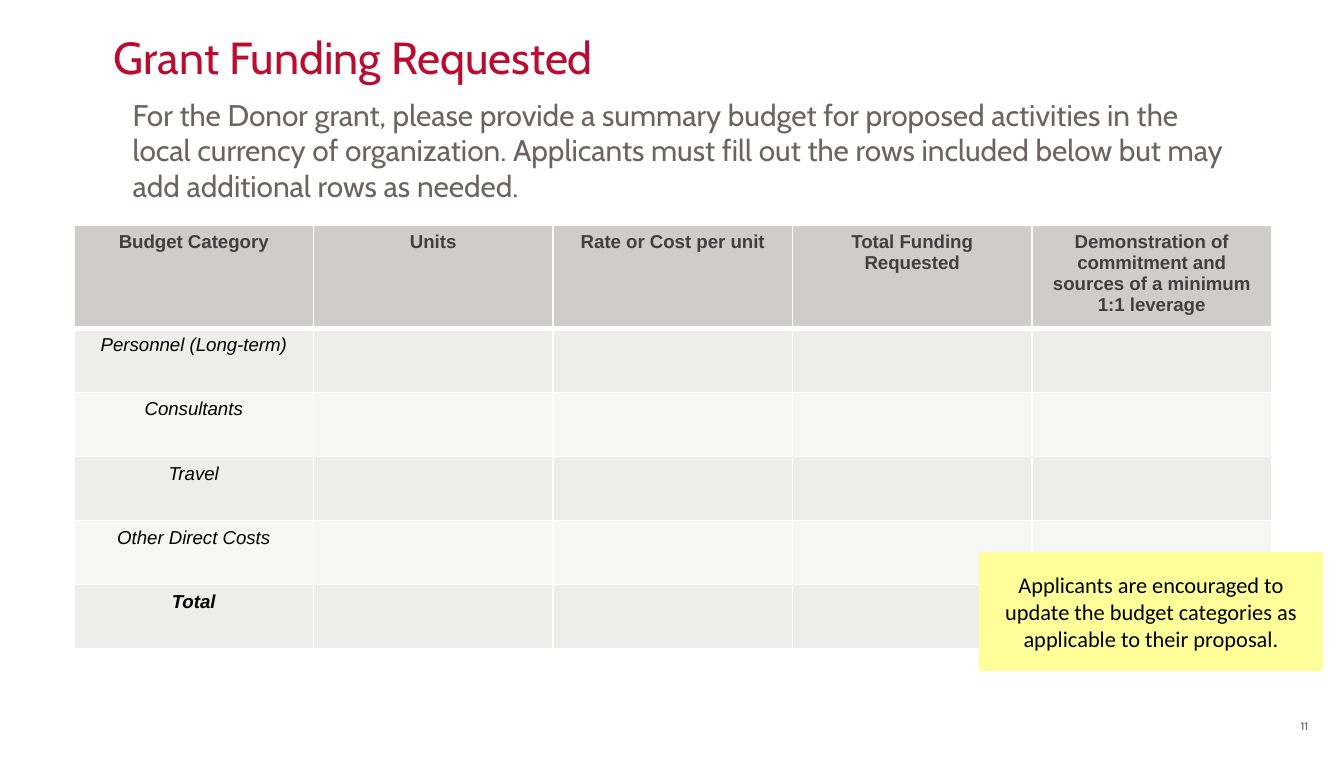
import pptx
import pptx.dml.color
import pptx.enum.shapes
import pptx.enum.text
import pptx.oxml
import pptx.oxml.ns
import pptx.util

Pt = pptx.util.Pt
ALIGN = pptx.enum.text.PP_ALIGN
ANCHOR = pptx.enum.text.MSO_ANCHOR

HEADERS = [
    "Budget Category",
    "Units",
    "Rate or Cost per unit",
    "Total Funding Requested",
    "Demonstration of commitment and sources of a minimum 1:1 leverage",
]
CATEGORIES = [
    "Personnel (Long-term)",
    "Consultants",
    "Travel",
    "Other Direct Costs",
    "Total",
]


def color(value):
    return pptx.dml.color.RGBColor.from_string(value)


def write(frame, text, font, size, ink, align=ALIGN.LEFT, bold=False, italic=False):
    frame.text = text
    para = frame.paragraphs[0]
    para.alignment = align
    for span in para.runs:
        span.font.name = font
        span.font.size = Pt(size)
        span.font.color.rgb = color(ink)
        span.font.bold = bold
        span.font.italic = italic
    return para


def add_text(page, left, top, width, height, anchor, text, size, ink, align=ALIGN.LEFT):
    box = page.shapes.add_textbox(Pt(left), Pt(top), Pt(width), Pt(height))
    frame = box.text_frame
    frame.word_wrap = True
    frame.vertical_anchor = anchor
    return write(frame, text, "Cabin", size, ink, align)


def style_cell(cell, fill, bottom_width=1):
    # Borders come before the fill in the cell properties
    properties = cell._tc.get_or_add_tcPr()
    for side, width in (("L", 1), ("R", 1), ("T", 1), ("B", bottom_width)):
        properties.append(pptx.oxml.parse_xml(
            f'<a:ln{side} {pptx.oxml.ns.nsdecls("a")} w="{Pt(width)}">'
            f'<a:solidFill><a:srgbClr val="FFFFFF"/></a:solidFill></a:ln{side}>'
        ))
    cell.fill.solid()
    cell.fill.fore_color.rgb = color(fill)


def add_budget_table(page):
    row_count, column_count = len(CATEGORIES) + 1, len(HEADERS)
    table = page.shapes.add_table(
        row_count, column_count, Pt(39.6), Pt(120.5), Pt(641.5), Pt(207.5)
    ).table
    for column in table.columns:
        column.width = Pt(128.3)

    # Header row
    table.rows[0].height = Pt(36)
    for index, header in enumerate(HEADERS):
        cell = table.cell(0, index)
        write(cell.text_frame, header, "Arial", 10, "404040", ALIGN.CENTER, bold=True)
        style_cell(cell, "CFCDC9", bottom_width=3)

    # Banded category rows
    for row, category in enumerate(CATEGORIES, start=1):
        table.rows[row].height = Pt(34.3)
        write(table.cell(row, 0).text_frame, category, "Arial", 10, "000000",
              ALIGN.CENTER, bold=category == "Total", italic=True)
        for index in range(column_count):
            style_cell(table.cell(row, index), "EDEDEB" if row % 2 else "F6F6F5")


def add_note(page, left, top, width, height, text):
    note = page.shapes.add_shape(
        pptx.enum.shapes.MSO_SHAPE.RECTANGLE, Pt(left), Pt(top), Pt(width), Pt(height)
    )
    note.shadow.inherit = False
    note.fill.solid()
    note.fill.fore_color.rgb = color("FFFF99")
    note.line.color.rgb = color("FFFF99")
    note.line.width = Pt(2)
    note.text_frame.word_wrap = True
    note.text_frame.vertical_anchor = ANCHOR.MIDDLE
    write(note.text_frame, text, "Calibri", 12, "000000", ALIGN.CENTER)


def main():
    deck = pptx.Presentation()
    deck.slide_width, deck.slide_height = Pt(720), Pt(408)
    page = deck.slides.add_slide(deck.slide_layouts[6])

    # Page number, title and instructions
    add_text(page, 540, 381.6, 168, 14.4, ANCHOR.MIDDLE, "11", 6, "6C6463", ALIGN.RIGHT)
    add_text(page, 54, 12, 612, 36, ANCHOR.BOTTOM, "Grant Funding Requested", 24, "BA0C2F")
    instructions = add_text(
        page, 54, 48, 612, 252, ANCHOR.TOP,
        "For the Donor grant, please provide a summary budget for proposed activities "
        "in the local currency of organization. Applicants must fill out the rows "
        "included below but may add additional rows as needed.",
        16, "6C6463",
    )
    instructions._p.get_or_add_pPr().set("marL", str(Pt(10)))

    # Budget and the note over its corner
    add_budget_table(page)
    add_note(page, 525.6, 296.6, 182.2, 61.9,
             "Applicants are encouraged to update the budget categories as "
             "applicable to their proposal.")

    deck.save("out.pptx")


if __name__ == "__main__":
    main()
